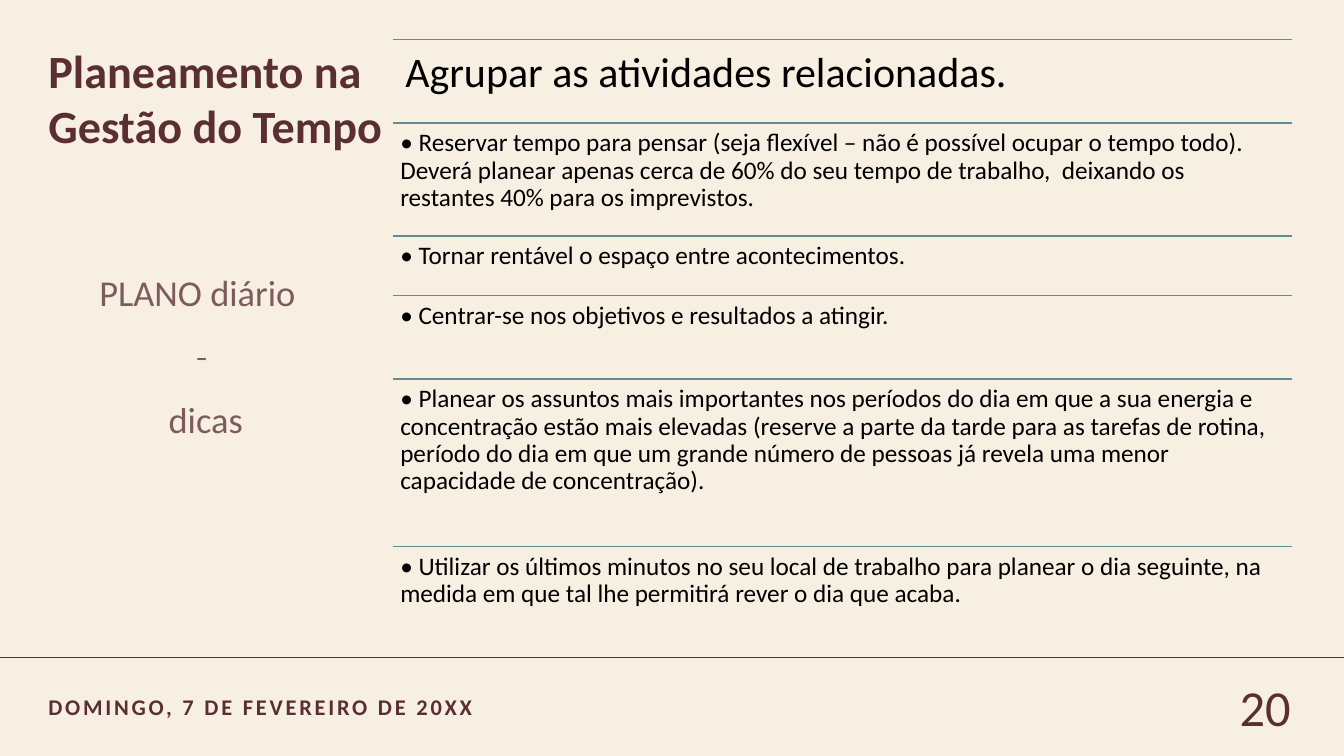
import pptx
import pptx.util
import pptx.dml.color
import pptx.enum.text
import pptx.oxml.ns
import lxml.etree

Inches = pptx.util.Inches
Pt = pptx.util.Pt
Align = pptx.enum.text.PP_ALIGN
Anchor = pptx.enum.text.MSO_ANCHOR
qn = pptx.oxml.ns.qn
WINE = "592F34"
TEAL = "5B8E96"


def paint(color, code):
    color.rgb = pptx.dml.color.RGBColor.from_string(code)


def write(box, lines, size, code, pad=(0, 0), align=Align.LEFT):
    frame = slide.shapes.add_textbox(*map(Inches, box)).text_frame
    frame.word_wrap = True
    frame.margin_left = frame.margin_right = Inches(pad[0])
    frame.margin_top = frame.margin_bottom = Inches(pad[1])
    frame.text = "\n".join(lines)
    for para in frame.paragraphs:
        para.alignment = align
        para.font.name = "Calibri"
        para.font.size = Pt(size)
        para.font.color.rgb = pptx.dml.color.RGBColor.from_string(code)
    return frame


deck = pptx.Presentation()
deck.slide_width = Inches(13.33)
deck.slide_height = Inches(7.5)
slide = deck.slides.add_slide(deck.slide_layouts[6])
slide.background.fill.solid()
paint(slide.background.fill.fore_color, "F8EFE3")

title = write((0.48, 0.42, 3.78, 1.5), ["Planeamento na Gestão do Tempo"], 33, WINE)
title.paragraphs[0].font.bold = True

plan = write((0.11, 2.59, 3.78, 3.47), ["PLANO diário ", "-", " dicas"], 26, WINE,
             align=Align.CENTER)
for para in plan.paragraphs:
    para.line_spacing = 1.2
    para.space_before = Pt(8)
    for tone in para.font.fill._xPr.iter(qn("a:srgbClr")):
        lxml.etree.SubElement(tone, qn("a:alpha")).set("val", "77000")

date = write((0.48, 6.52, 4.66, 0.98), ["DOMINGO, 7 DE FEVEREIRO DE 20XX"], 16, WINE, (0, 0.08))
date.paragraphs[0].font.bold = True
date.paragraphs[0].runs[0].font._element.set("spc", "200")
page = write((11.19, 6.52, 1.61, 0.98), ["20"], 36, WINE, (0, 0.08), Align.RIGHT)
for foot in (date, page):
    foot.vertical_anchor = Anchor.MIDDLE
    foot.paragraphs[0].space_after = Pt(6)

tips = [
    (0.39, 0.83, 30, 0.12, "Agrupar as atividades relacionadas."),
    (1.22, 1.13, 18, 0.07, "• Reservar tempo para pensar (seja flexível – não é possível ocupar o tempo "
     "todo). Deverá planear apenas cerca de 60% do seu tempo de trabalho,  deixando os "
     "restantes 40% para os imprevistos."),
    (2.34, 0.59, 18, 0.07, "• Tornar rentável o espaço entre acontecimentos."),
    (2.93, 0.83, 18, 0.07, "• Centrar-se nos objetivos e resultados a atingir."),
    (3.76, 1.66, 18, 0.07, "• Planear os assuntos mais importantes nos períodos do dia em que a sua "
     "energia e concentração estão mais elevadas (reserve a parte da tarde para as tarefas de "
     "rotina, período do dia em que um grande número de pessoas já revela uma menor "
     "capacidade de concentração)."),
    (5.42, 0.83, 18, 0.07, "• Utilizar os últimos minutos no seu local de trabalho para planear o dia "
     "seguinte, na medida em que tal lhe permitirá rever o dia que acaba."),
]
rules = [(0, 13.33, 6.52, WINE, 0.75)]
for top, height, size, pad, text in tips:
    tip = write((3.9, top, 8.91, height), [text], size, "000000", (pad, pad))
    tip.paragraphs[0].line_spacing = 0.9
    rules.append((3.9, 12.81, top, TEAL, 1))

for left, right, top, code, width in rules:
    rule = slide.shapes.add_connector(1, Inches(left), Inches(top), Inches(right), Inches(top))
    rule.line.width = Pt(width)
    rule.line.fill.solid()
    paint(rule.line.color, code)
    lxml.etree.SubElement(rule._element.spPr, qn("a:effectLst"))

deck.save("out.pptx")
